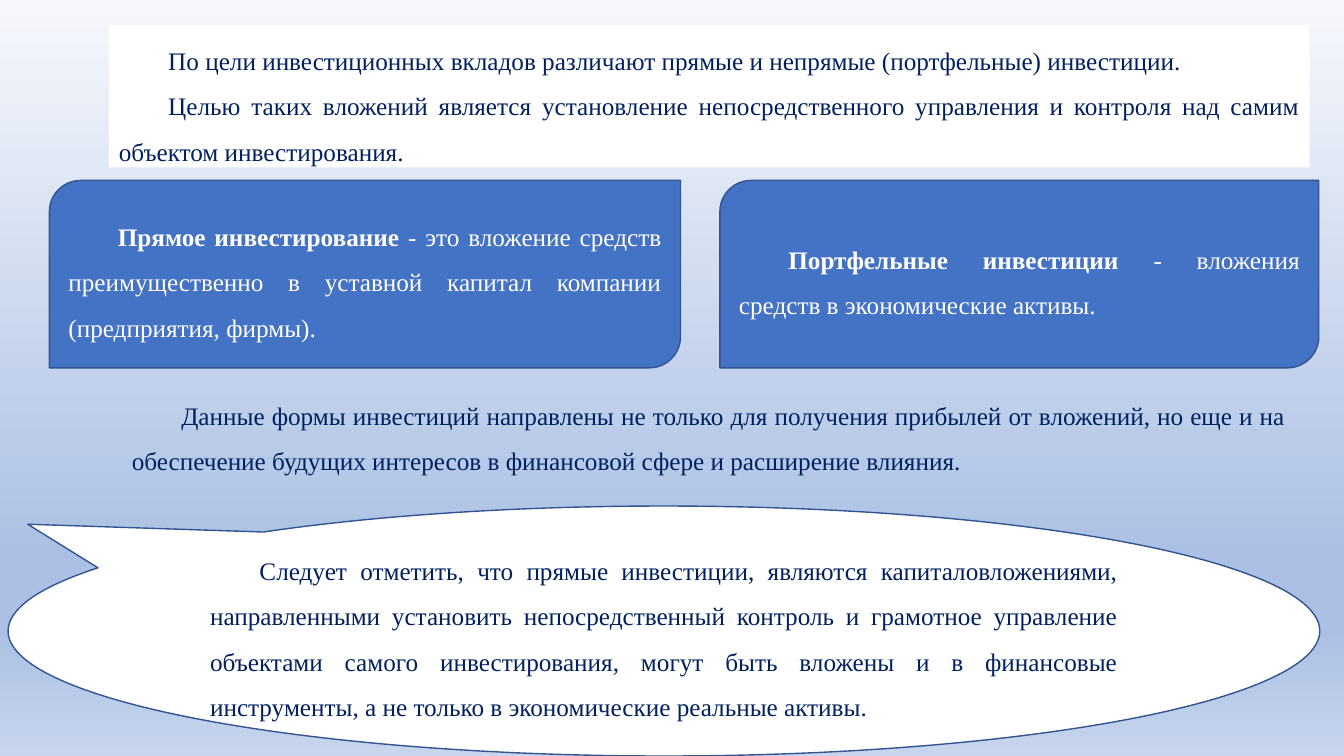
from pptx import Presentation, oxml
from pptx.dml.color import RGBColor
from pptx.enum import shapes, text
from pptx.oxml.ns import nsdecls
from pptx.util import Inches, Pt

THEME = {
    "font": "Times New Roman", "size": 18, "spacing": 1.5, "indent": 0.49,
    "navy": "002060", "white": "FFFFFF", "blue": "4472C4", "outline": "325491",
    "background": [(0, "F6F8FC"), (74, "ABC0E4"), (83, "ABC0E4"), (100, "C7D5ED")],
}

# Each paragraph is a list of (words, bold) pairs.
INTRO = [
    [("По цели инвестиционных вкладов различают прямые и непрямые (портфельные) инвестиции.", False)],
    [("Целью таких вложений является установление непосредственного управления и контроля "
      "над самим объектом инвестирования.", False)],
]
DIRECT = [[
    ("Прямое инвестирование", True),
    (" - это вложение средств преимущественно в уставной капитал компании "
     "(предприятия, фирмы).", False),
]]
PORTFOLIO = [[
    ("Портфельные инвестиции", True),
    (" - вложения средств в экономические активы.", False),
]]
PURPOSE = [[
    ("Данные формы инвестиций направлены не только для получения прибылей от вложений, но еще и на "
     "обеспечение будущих интересов в финансовой сфере и расширение влияния.", False),
]]
CONCLUSION = [[
    ("Следует отметить, что прямые инвестиции, являются капиталовложениями, направленными установить "
     "непосредственный контроль и грамотное управление объектами самого инвестирования, могут быть "
     "вложены и в финансовые инструменты, а не только в экономические реальные активы.", False),
]]

CARD_TOP, CARD_HEIGHT = 1.79, 1.86
# (paragraphs, left, width, space after)
CARDS = [(DIRECT, 0.49, 6.26, 8), (PORTFOLIO, 7.14, 5.94, 0)]


def color(name):
    return RGBColor.from_string(THEME[name])


def write(shape, paragraphs, ink="navy", anchor=text.MSO_ANCHOR.TOP, space_after=0):
    frame = shape.text_frame
    frame.word_wrap = True
    frame.vertical_anchor = anchor
    for index, parts in enumerate(paragraphs):
        paragraph = frame.paragraphs[0] if index == 0 else frame.add_paragraph()
        paragraph.alignment = text.PP_ALIGN.JUSTIFY
        paragraph.line_spacing = THEME["spacing"]
        paragraph.space_after = Pt(space_after)
        paragraph._p.get_or_add_pPr().set("indent", str(Inches(THEME["indent"])))
        for words, bold in parts:
            run = paragraph.add_run()
            run.text = words
            run.font.name = THEME["font"]
            run.font.size = Pt(THEME["size"])
            run.font.bold = bold
            run.font.color.rgb = color(ink)


def add_panel(slide, kind, box, fill, outline=None):
    shape = slide.shapes.add_shape(kind, *map(Inches, box))
    shape.shadow.inherit = False
    shape.fill.solid()
    shape.fill.fore_color.rgb = color(fill)
    if outline:
        shape.line.color.rgb = color(outline)
        shape.line.width = Pt(1)
    else:
        shape.line.fill.background()
    return shape


def set_background(slide):
    """Fill the slide with a vertical gradient of several stops."""
    stops = "".join(
        f'<a:gs pos="{percent * 1000}"><a:srgbClr val="{rgb}"/></a:gs>'
        for percent, rgb in THEME["background"])
    background = oxml.parse_xml(
        f'<p:bg {nsdecls("p", "a")}><p:bgPr><a:gradFill rotWithShape="1">'
        f'<a:gsLst>{stops}</a:gsLst><a:lin ang="5400000" scaled="1"/>'
        '</a:gradFill><a:effectLst/></p:bgPr></p:bg>')
    slide.element.cSld.insert(0, background)


def main():
    presentation = Presentation()
    presentation.slide_width, presentation.slide_height = Inches(13.33), Inches(7.5)
    slide = presentation.slides.add_slide(presentation.slide_layouts[6])
    set_background(slide)
    kinds, middle = shapes.MSO_SHAPE, text.MSO_ANCHOR.MIDDLE

    intro = add_panel(slide, kinds.RECTANGLE, (1.08, 0.25, 11.91, 1.41), "white")
    write(intro, INTRO)

    for paragraphs, left, width, space_after in CARDS:
        card = add_panel(slide, kinds.ROUND_2_DIAG_RECTANGLE,
                         (left, CARD_TOP, width, CARD_HEIGHT), "blue", "outline")
        write(card, paragraphs, ink="white", anchor=middle, space_after=space_after)

    purpose = slide.shapes.add_textbox(*map(Inches, (1.21, 3.77, 11.64, 0.96)))
    write(purpose, PURPOSE)

    callout = add_panel(slide, kinds.OVAL_CALLOUT, (0.08, 5.02, 13.01, 2.48), "white", "outline")
    callout.adjustments[0], callout.adjustments[1] = -0.485, -0.427
    write(callout, CONCLUSION, anchor=middle)

    presentation.save("out.pptx")


if __name__ == "__main__":
    main()
